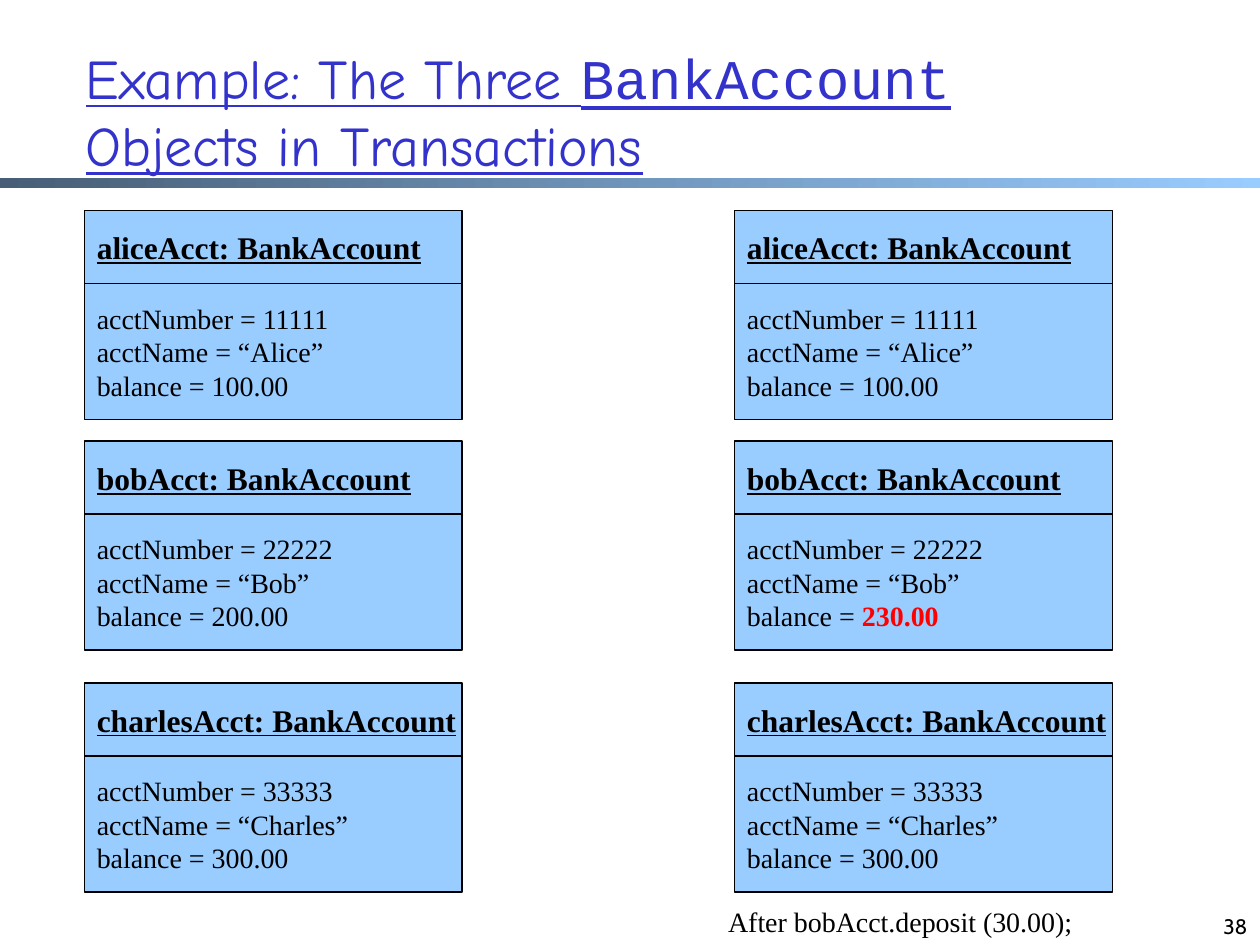
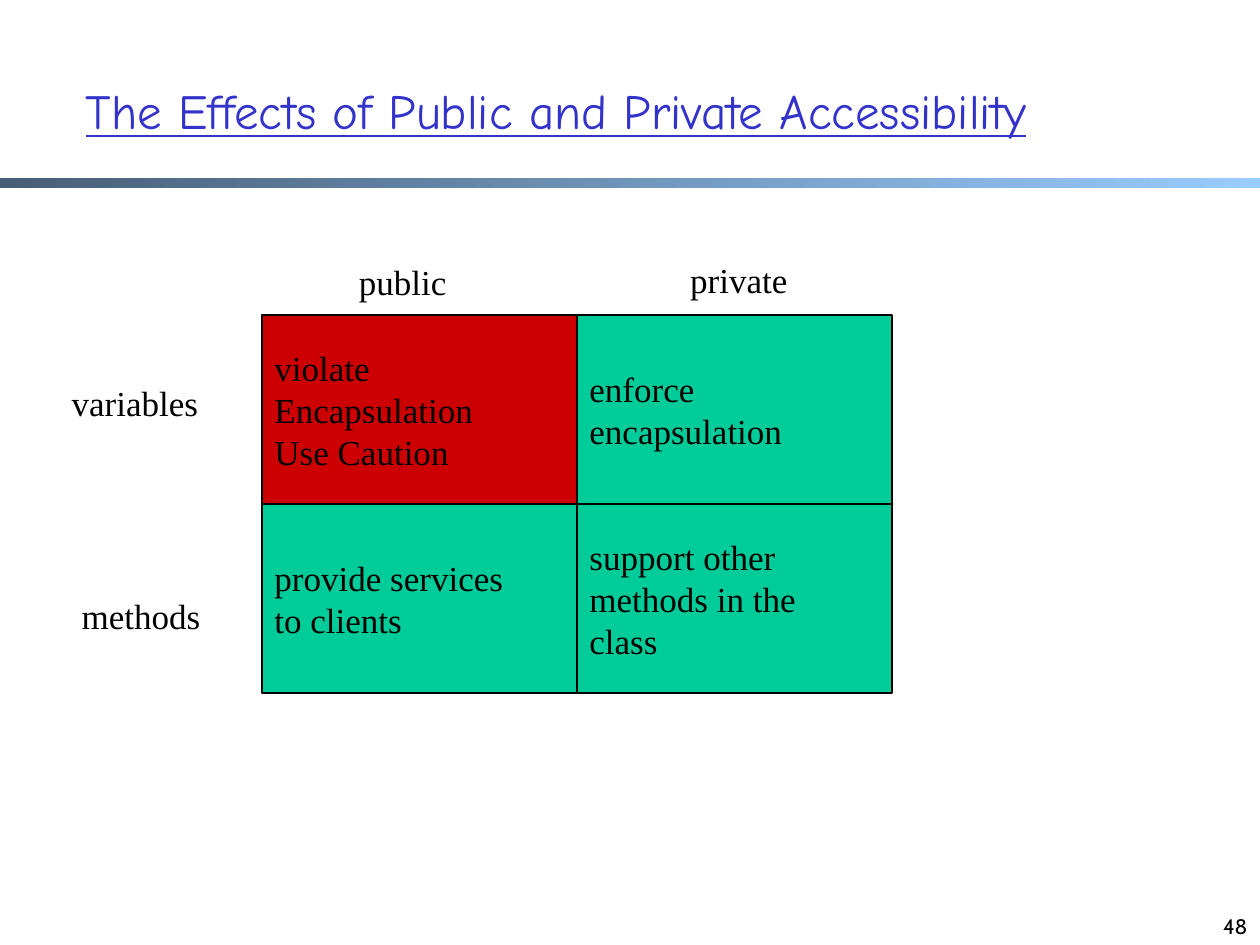
"""Builds two slides on BankAccount objects and on public and private accessibility."""
from lxml import etree
from pptx import Presentation
from pptx import util as u
from pptx.dml.color import RGBColor
from pptx.enum import shapes, text
from pptx.oxml.ns import qn

SERIF = "Times New Roman"
THEME = {
    "color": {"band_dark": "475E76", "sky": "99CCFF", "black": "000000",
              "caution": "CC0000", "safe": "00CC99"},
    "title": {"size": 32, "name": "Comic Neue", "underline": True, "color": "3333CC"},
    "title_code": {"size": 32, "name": "Courier New", "underline": True, "color": "3333CC"},
    "title_small": {"size": 28, "name": "Comic Neue", "underline": True, "color": "3333CC"},
    "number": {"size": 12, "name": "Cabin", "color": "000000"},
    "head": {"size": 18, "name": SERIF, "bold": True, "underline": True, "color": "000000"},
    "field": {"size": 16, "name": SERIF, "color": "000000"},
    "changed": {"size": 16, "name": SERIF, "bold": True, "color": "FF0000"},
    "matrix": {"size": 20, "name": SERIF, "color": "000000"},
}
COLOR = THEME["color"]


def write(tf, paragraphs, align=text.PP_ALIGN.LEFT, wrap=False, anchor=text.MSO_ANCHOR.MIDDLE):
    """Fill a text frame with paragraphs, each a list of (text, style) runs."""
    formats = {"word_wrap": wrap, "vertical_anchor": anchor, "auto_size": text.MSO_AUTO_SIZE.NONE}
    for key, value in formats.items():
        setattr(tf, key, value)
    for i, runs in enumerate(paragraphs):
        p = tf.add_paragraph() if i else tf.paragraphs[0]
        p.alignment = align
        for content, style in runs:
            r = p.add_run()
            r.text = content
            for key, value in THEME[style].items():
                if key == "color":
                    r.font.color.rgb = RGBColor.from_string(value)
                else:
                    setattr(r.font, key, u.Pt(value) if key == "size" else value)


def add_box(s, x, y, w, h, fill, paragraphs):
    """Add an outlined rectangle holding left-aligned text."""
    sp = s.shapes.add_shape(shapes.MSO_SHAPE.RECTANGLE, *map(u.Inches, (x, y, w, h)))
    sp.shadow.inherit = False
    sp.fill.solid()
    sp.fill.fore_color.rgb = RGBColor.from_string(fill)
    sp.line.color.rgb = RGBColor.from_string(COLOR["black"])
    sp.line.width = u.Pt(1)
    write(sp.text_frame, paragraphs)


prs = Presentation()
prs.slide_width, prs.slide_height = u.Inches(10), u.Inches(7.5)

pages = [
    ("38", 8.5, [("Example: The Three ", "title"), ("BankAccount", "title_code"),
                 (" Objects in Transactions", "title")]),
    ("48", 8.83, [("The Effects of Public and Private Accessibility", "title_small")]),
]
for number, title_width, title in pages:
    s = prs.slides.add_slide(prs.slide_layouts[5])
    band = s.shapes.add_shape(shapes.MSO_SHAPE.RECTANGLE, 0, u.Inches(1.41),
                              prs.slide_width, u.Inches(0.08))
    band.shadow.inherit = False
    band.line.fill.background()
    band.fill.gradient()
    band.fill.gradient_angle = 0
    for stop, name in zip(band.fill.gradient_stops, ("band_dark", "sky")):
        stop.color.rgb = RGBColor.from_string(COLOR[name])
    sp = s.shapes.title
    sp.left, sp.top, sp.width, sp.height = map(u.Inches, (0.58, 0.25, title_width, 1.25))
    write(sp.text_frame, [title], wrap=True)
    sp = s.shapes.add_textbox(*map(u.Inches, (7.67, 7, 2.33, 0.5)))
    write(sp.text_frame, [[(number, "number")]], text.PP_ALIGN.RIGHT, True, text.MSO_ANCHOR.BOTTOM)

accounts_slide, access_slide = prs.slides

HEAD_H, BODY_H = 0.58, 1.08
accounts = [
    (1.67, "alice", "11111", "100.00", "100.00"),
    (3.5, "bob", "22222", "200.00", "230.00"),
    (5.42, "charles", "33333", "300.00", "300.00"),
]
for y, owner, acct_number, before, after in accounts:
    for x, balance in ((0.67, before), (5.83, after)):
        add_box(accounts_slide, x, y, 3, HEAD_H, COLOR["sky"],
                [[(f"{owner}Acct: BankAccount", "head")]])
        add_box(accounts_slide, x, y + HEAD_H, 3, BODY_H, COLOR["sky"], [
            [(f"acctNumber = {acct_number}", "field")],
            [(f"acctName = “{owner.title()}”", "field")],
            [("balance = ", "field"), (balance, "field" if balance == before else "changed")],
        ])

LEFT, TOP, CELL_W, CELL_H = 2.08, 2.5, 2.5, 1.5
matrix = [
    [["violate", "Encapsulation", "Use Caution"], ["enforce", "encapsulation"]],
    [["provide services", "to clients"], ["support other", "methods in the", "class"]],
]
for row, cells in enumerate(matrix):
    for col, lines in enumerate(cells):
        fill = COLOR["safe"] if row or col else COLOR["caution"]
        add_box(access_slide, LEFT + col * CELL_W, TOP + row * CELL_H, CELL_W, CELL_H, fill,
                [[(line, "matrix")] for line in lines])

labels = [
    (accounts_slide, 5.68, 7.13, 2.95, 0.37, "After bobAcct.deposit (30.00);", "field"),
    (access_slide, 2.75, 2.02, 0.89, 0.43, "public", "matrix"),
    (access_slide, 5.38, 2, 0.97, 0.43, "private", "matrix"),
    (access_slide, 0.47, 2.98, 1.2, 0.43, "variables", "matrix"),
    (access_slide, 0.55, 4.67, 1.14, 0.43, "methods", "matrix"),
]
for s, x, y, w, h, label, style in labels:
    sp = s.shapes.add_textbox(*map(u.Inches, (x, y, w, h)))
    write(sp.text_frame, [[(label, style)]], anchor=text.MSO_ANCHOR.TOP)

mid_x, mid_y = LEFT + CELL_W, TOP + CELL_H
dividers = [(LEFT, mid_y, LEFT + 2 * CELL_W, mid_y), (mid_x, TOP, mid_x, TOP + 2 * CELL_H)]
for ends in dividers:
    line = access_slide.shapes.add_connector(shapes.MSO_CONNECTOR.STRAIGHT, *map(u.Inches, ends))
    line.line.color.rgb = RGBColor.from_string(COLOR["black"])
    line.line.width = u.Pt(1)
    etree.SubElement(line._element.spPr, qn("a:effectLst"))

prs.save("out.pptx")
